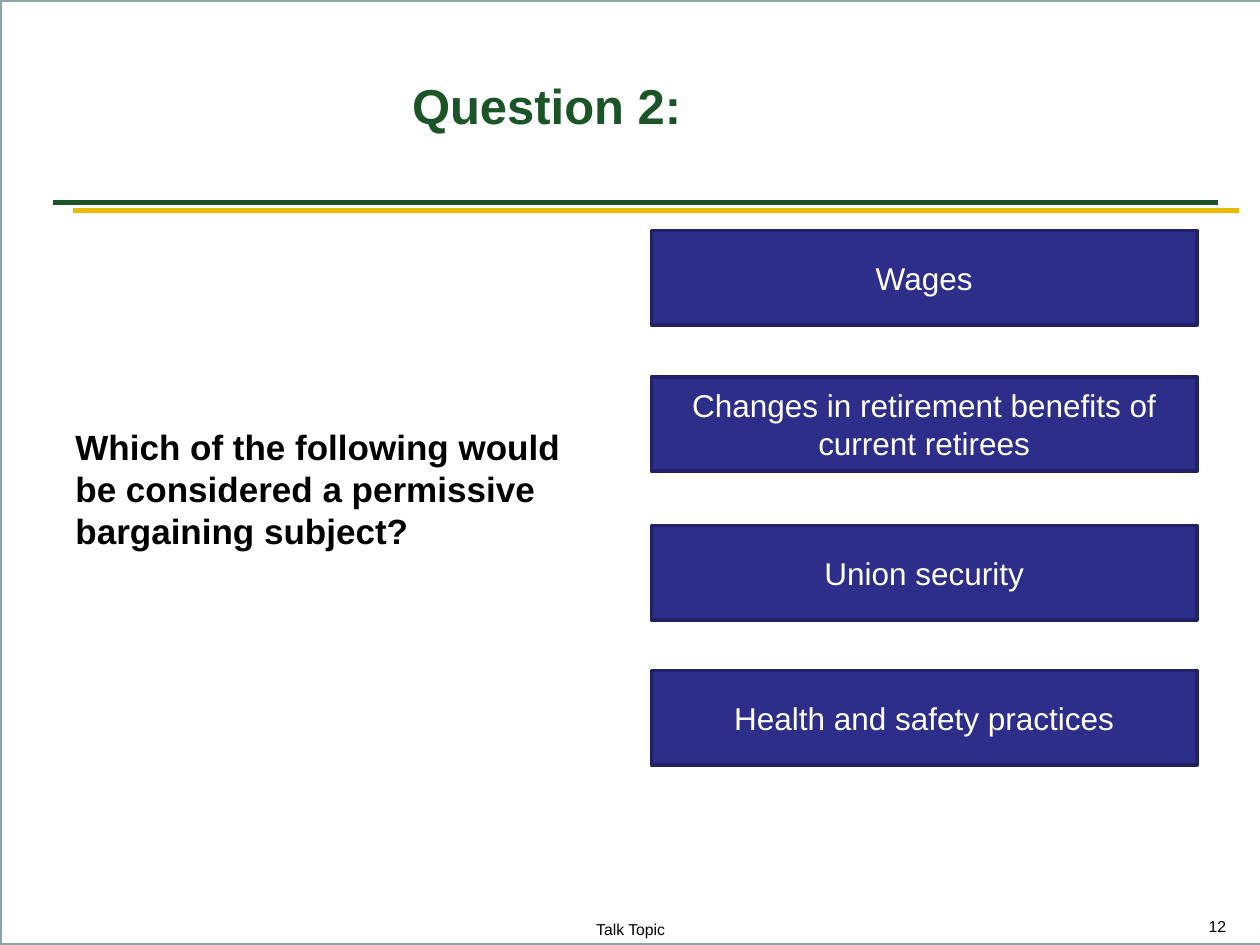
from pptx import Presentation
from pptx import util as u
from pptx.dml.color import RGBColor
from pptx.enum import shapes, text
from pptx.oxml.ns import qn
from lxml import etree

HUES = {
    "green": "1B5527", "gold": "E8BB00", "frame": "8AA6A8",
    "fill": "2D2D8A", "edge": "212166", "black": "000000", "white": "FFFFFF",
}
TITLE = "Question 2:"
ASK = "Which of the following would be considered a permissive bargaining subject?"
CHOICES = [
    ("Wages", 1.83),
    ("Changes in retirement benefits of current retirees", 2.99),
    ("Union security", 4.17),
    ("Health and safety practices", 5.32),
]
RULES = [(0.42, 1.61, "green"), (0.58, 1.67, "gold")]
NOTES = [
    (ASK, (0.5, 3.33, 4.42, 0.75), 20, "black", True, "LEFT"),
    ("Talk Topic", (3.42, 7.25, 3.17, 0.25), 9, "black", False, "CENTER"),
    ("12", (7.83, 7.23, 2, 0.25), 9, "black", False, "RIGHT"),
]


def hue(name):
    return RGBColor.from_string(HUES[name])


def box(*sides):
    return [u.Inches(side) for side in sides]


def write(shape, words, size, color, bold=False, align="LEFT", anchor="TOP"):
    frame = shape.text_frame
    frame.text = words
    frame.word_wrap = True
    frame.auto_size = text.MSO_AUTO_SIZE.NONE
    frame.vertical_anchor = getattr(text.MSO_ANCHOR, anchor)
    para = frame.paragraphs[0]
    para.alignment = getattr(text.PP_ALIGN, align)
    font = para.font
    font.name, font.size, font.bold = "Arial", u.Pt(size), bold
    font.color.rgb = hue(color)


def stroke(shape, color, width):
    shape.line.color.rgb = hue(color)
    shape.line.width = u.Pt(width)


def panel(kind, place, edge):
    shape = slide.shapes.add_shape(kind, *box(*place))
    shape.shadow.inherit = False
    stroke(shape, edge, 2)
    return shape


deck = Presentation()
deck.slide_width, deck.slide_height = box(10, 7.5)
slide = deck.slides.add_slide(deck.slide_layouts[5])

for left, top, color in RULES:
    rule = slide.shapes.add_connector(
        shapes.MSO_CONNECTOR.STRAIGHT, *box(left, top, left + 9.25, top))
    stroke(rule, color, 3)
    etree.SubElement(rule._element.spPr, qn("a:effectLst"))

border = panel(shapes.MSO_SHAPE.ACTION_BUTTON_CUSTOM, (0, 0, 10.08, 7.5), "frame")
border.fill.background()

title = slide.shapes.title
title.left, title.top, title.width, title.height = box(3.17, 0.17, 6.33, 1.33)
write(title, TITLE, 28, "green", True, anchor="MIDDLE")

for words, place, *style in NOTES:
    write(slide.shapes.add_textbox(*box(*place)), words, *style)

for words, top in CHOICES:
    button = panel(shapes.MSO_SHAPE.RECTANGLE, (5.17, top, 4.33, 0.75), "edge")
    button.fill.solid()
    button.fill.fore_color.rgb = hue("fill")
    write(button, words, 18, "white", align="CENTER", anchor="MIDDLE")

deck.save("out.pptx")
